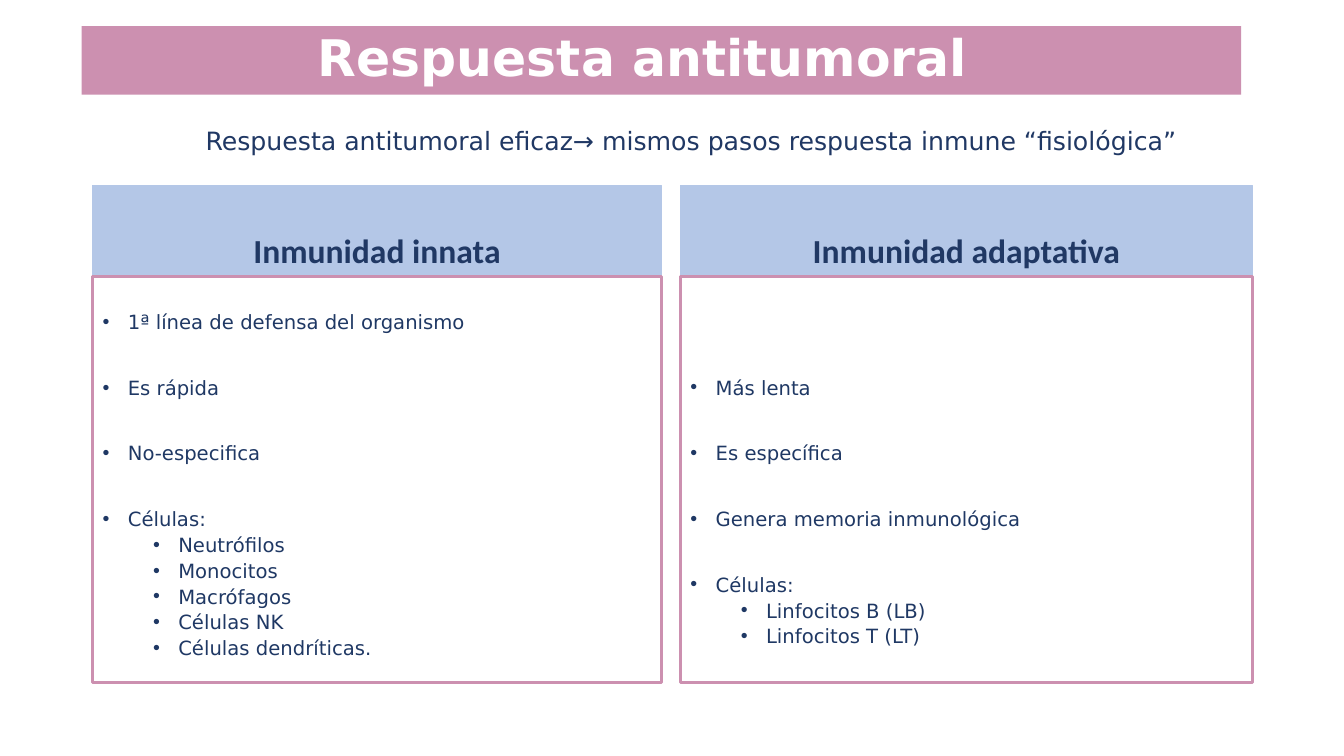
from dataclasses import dataclass

from lxml.etree import SubElement
from pptx import Presentation
from pptx.dml.color import RGBColor
from pptx.enum.shapes import MSO_SHAPE
from pptx.enum.text import MSO_ANCHOR, PP_ALIGN
from pptx.oxml.ns import qn
from pptx.util import Inches, Pt

TITLE = "Respuesta antitumoral"
SUBTITLE = "Respuesta antitumoral eficaz→ mismos pasos respuesta inmune “fisiológica”"
COLUMNS = [
    {
        "heading": "Inmunidad innata",
        "left": 0.92,
        "width": 5.64,
        "top_inset": 0.38,
        "points": ["1ª línea de defensa del organismo", "Es rápida", "No-especifica", "Células:"],
        "cells": ["Neutrófilos", "Monocitos", "Macrófagos", "Células NK", "Células dendríticas."],
    },
    {
        "heading": "Inmunidad adaptativa",
        "left": 6.75,
        "width": 5.67,
        "top_inset": 1.03,
        "points": ["Más lenta", "Es específica", "Genera memoria inmunológica", "Células:"],
        "cells": ["Linfocitos B (LB)", "Linfocitos T (LT)"],
    },
]
HEADING_TOP, HEADING_HEIGHT = 1.84, 0.9
LIST_HEIGHT = 4.03


@dataclass(frozen=True)
class Theme:
    pink: str = "CC90B0"
    blue: str = "B4C7E7"
    white: str = "FFFFFF"
    navy: str = "203864"
    list_navy: str = "1F3864"
    text_font: str = "DejaVu Sans"
    heading_font: str = "Calibri"
    title_size: int = 36
    heading_size: int = 24
    subtitle_size: int = 18
    list_size: int = 14
    point_gap: float = 33.5
    cell_gap: float = 5


THEME = Theme()


def add_panel(page, left, top, width, height, fill=None, line=None, line_width=0.75):
    panel = page.shapes.add_shape(
        MSO_SHAPE.RECTANGLE, Inches(left), Inches(top), Inches(width), Inches(height)
    )
    panel.shadow.inherit = False
    if fill:
        panel.fill.solid()
        panel.fill.fore_color.rgb = RGBColor.from_string(fill)
    else:
        panel.fill.background()
    if line:
        panel.line.color.rgb = RGBColor.from_string(line)
        panel.line.width = Pt(line_width)
    else:
        panel.line.fill.background()
    panel.text_frame.word_wrap = True
    return panel


def write(para, text, font, size, color, bold=False, align=PP_ALIGN.LEFT, spacing=None):
    para.alignment = align
    para.line_spacing = spacing
    span = para.add_run()
    span.text = text
    span.font.name = font
    span.font.size = Pt(size)
    span.font.bold = bold
    span.font.color.rgb = RGBColor.from_string(color)


def add_bullet(para, indent):
    properties = para._p.get_or_add_pPr()
    properties.set("marL", str(Inches(indent)))
    properties.set("indent", str(Inches(-0.25)))
    SubElement(properties, qn("a:buFont")).set("typeface", "Arial")
    SubElement(properties, qn("a:buChar")).set("char", "•")


def add_title(page):
    frame = add_panel(page, 0.81, 0.26, 11.5, 0.68, fill=THEME.pink).text_frame
    frame.vertical_anchor = MSO_ANCHOR.MIDDLE
    frame.margin_right = Inches(0.47)
    write(frame.paragraphs[0], TITLE, THEME.text_font, THEME.title_size, THEME.white,
          bold=True, align=PP_ALIGN.CENTER, spacing=0.9)


def add_subtitle(page):
    box = page.shapes.add_textbox(Inches(1.94), Inches(1.19), Inches(10.1), Inches(0.4))
    box.text_frame.word_wrap = False
    write(box.text_frame.paragraphs[0], SUBTITLE, THEME.text_font,
          THEME.subtitle_size, THEME.navy)


def add_column(page, column):
    left, width = column["left"], column["width"]
    heading = add_panel(page, left, HEADING_TOP, width, HEADING_HEIGHT,
                        fill=THEME.blue, line=THEME.blue).text_frame
    heading.vertical_anchor = MSO_ANCHOR.BOTTOM
    write(heading.paragraphs[0], column["heading"], THEME.heading_font, THEME.heading_size,
          THEME.navy, bold=True, align=PP_ALIGN.CENTER, spacing=0.9)

    frame = add_panel(page, left, HEADING_TOP + HEADING_HEIGHT, width, LIST_HEIGHT,
                      line=THEME.pink, line_width=2.25).text_frame
    frame.vertical_anchor = MSO_ANCHOR.TOP
    frame.margin_top = Inches(column["top_inset"])
    items = [(text, 0, THEME.point_gap) for text in column["points"]]
    items += [(text, 1, THEME.cell_gap) for text in column["cells"]]
    for index, (text, level, gap) in enumerate(items):
        para = frame.add_paragraph() if index else frame.paragraphs[0]
        para.level = level
        add_bullet(para, 0.25 + 0.5 * level)
        para.space_before = Pt(gap if index else 0)
        write(para, text, THEME.text_font, THEME.list_size, THEME.list_navy, spacing=0.8)


def main():
    deck = Presentation()
    deck.slide_width, deck.slide_height = Inches(13.33), Inches(7.5)
    page = deck.slides.add_slide(deck.slide_layouts[6])
    add_title(page)
    for column in COLUMNS:
        add_column(page, column)
    add_subtitle(page)
    deck.save("out.pptx")


if __name__ == "__main__":
    main()
